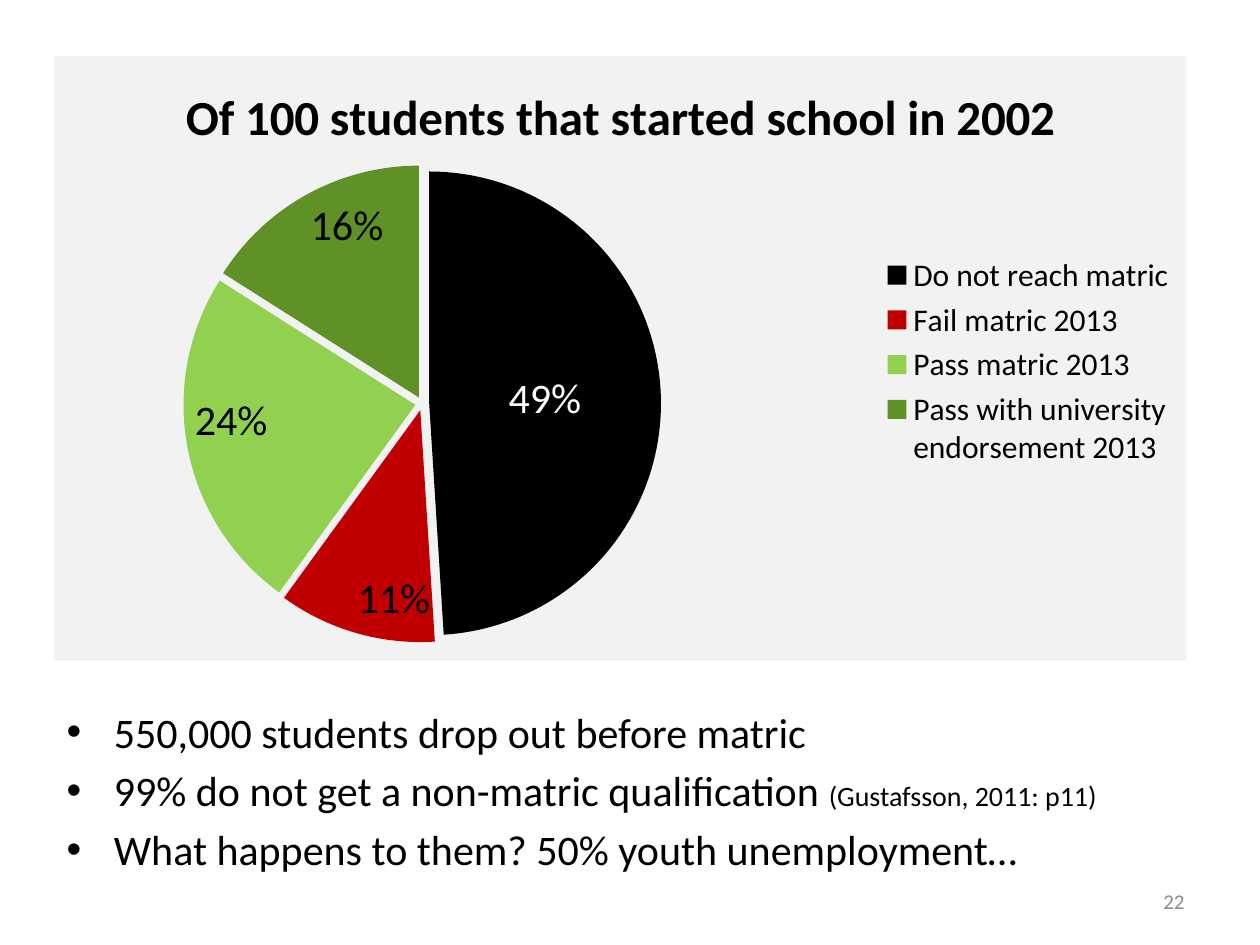
from dataclasses import dataclass

from lxml.etree import SubElement
from pptx import Presentation
from pptx.chart.data import CategoryChartData
from pptx.dml.color import RGBColor
from pptx.enum.chart import XL_CHART_TYPE, XL_LABEL_POSITION, XL_LEGEND_POSITION
from pptx.enum.text import MSO_ANCHOR, PP_ALIGN
from pptx.oxml import parse_xml
from pptx.oxml.ns import nsdecls, qn
from pptx.util import Pt


@dataclass(frozen=True)
class Theme:
    font: str = "Calibri"
    text: str = "000000"
    inverse: str = "FFFFFF"
    muted: str = "8C8C8C"
    panel: str = "F2F2F2"
    title: int = 28
    body: int = 24
    legend: int = 18
    cite: int = 16
    number: int = 12


@dataclass(frozen=True)
class Box:
    left: float
    top: float
    width: float
    height: float

    def pts(self) -> tuple:
        return Pt(self.left), Pt(self.top), Pt(self.width), Pt(self.height)


@dataclass(frozen=True)
class Slice:
    label: str
    share: int
    color: str


@dataclass(frozen=True)
class Bullet:
    text: str
    cite: str = ""


THEME = Theme()
SLICES = [
    Slice("Do not reach matric", 49, "000000"),
    Slice("Fail matric 2013", 11, "C00000"),
    Slice("Pass matric 2013", 24, "92D050"),
    Slice("Pass with university endorsement 2013", 16, "5F9127"),
]
BULLETS = [
    Bullet("550,000 students drop out before matric"),
    Bullet("99% do not get a non-matric qualification ", "(Gustafsson, 2011: p11)"),
    Bullet("What happens to them? 50% youth unemployment…"),
]


def set_font(font, size: int, color: str = THEME.text, bold: bool = False) -> None:
    font.name = THEME.font
    font.size = Pt(size)
    font.bold = bold
    font.color.rgb = RGBColor.from_string(color)


def add_run(p, text: str, **fmt) -> None:
    r = p.add_run()
    r.text = text
    set_font(r.font, **fmt)


def add_frame(s, box: Box, anchor: MSO_ANCHOR):
    tf = s.shapes.add_textbox(*box.pts()).text_frame
    tf.word_wrap = True
    tf.vertical_anchor = anchor
    return tf


def add_bullets(s, box: Box, bullets: list[Bullet]) -> None:
    tf = add_frame(s, box, MSO_ANCHOR.TOP)
    for i, bullet in enumerate(bullets):
        p = tf.add_paragraph() if i else tf.paragraphs[0]
        p.space_before = Pt(THEME.body * 0.2)
        pPr = p._p.get_or_add_pPr()
        pPr.set("marL", str(Pt(27)))
        pPr.set("indent", str(-Pt(27)))
        SubElement(pPr, qn("a:buFont")).set("typeface", "Arial")
        SubElement(pPr, qn("a:buChar")).set("char", "•")
        add_run(p, bullet.text, size=THEME.body)
        if bullet.cite:
            add_run(p, bullet.cite, size=THEME.cite)


def add_number(s, box: Box, number: str) -> None:
    p = add_frame(s, box, MSO_ANCHOR.MIDDLE).paragraphs[0]
    p.alignment = PP_ALIGN.RIGHT
    add_run(p, number, size=THEME.number, color=THEME.muted)


def set_layout(parent, index: int, frame: Box, inner: bool = False) -> None:
    for old in parent.findall(qn("c:layout")):
        parent.remove(old)
    target = '<c:layoutTarget val="inner"/>' if inner else ""
    parent.insert(index, parse_xml(
        f'<c:layout {nsdecls("c")}><c:manualLayout>{target}'
        '<c:xMode val="edge"/><c:yMode val="edge"/>'
        f'<c:x val="{frame.left}"/><c:y val="{frame.top}"/>'
        f'<c:w val="{frame.width}"/><c:h val="{frame.height}"/>'
        '</c:manualLayout></c:layout>'))


def add_pie(s, box: Box, title: str, slices: list[Slice]) -> None:
    data = CategoryChartData()
    data.categories = [x.label for x in slices]
    data.add_series("Series 1", [x.share for x in slices])
    chart = s.shapes.add_chart(XL_CHART_TYPE.PIE, *box.pts(), data).chart
    set_font(chart.font, 10)
    chart._chartSpace.find(qn("c:txPr")).addprevious(parse_xml(
        f'<c:spPr {nsdecls("c", "a")}><a:solidFill><a:srgbClr val="{THEME.panel}"/>'
        '</a:solidFill><a:ln><a:noFill/></a:ln></c:spPr>'))

    chart.has_title = True
    add_run(chart.chart_title.text_frame.paragraphs[0], title,
            size=THEME.title, bold=True)

    chart.has_legend = True
    legend = chart.legend
    legend.position = XL_LEGEND_POSITION.RIGHT
    legend.include_in_layout = False
    set_font(legend.font, THEME.legend)
    set_layout(legend._element, 1, Box(0.73, 0.32, 0.26, 0.37))

    plot = chart.plots[0]
    plot.vary_by_categories = True
    set_layout(chart._chartSpace.chart.plotArea, 0, Box(0.11, 0.18, 0.43, 0.79), inner=True)
    series = plot.series[0]
    for i, x in enumerate(slices):
        fill = series.points[i].format.fill
        fill.solid()
        fill.fore_color.rgb = RGBColor.from_string(x.color)
    series._element.find(qn("c:dPt")).addprevious(
        parse_xml(f'<c:explosion {nsdecls("c")} val="3"/>'))

    labels = series.data_labels
    labels.show_percentage = True
    labels.show_value = False
    labels.position = XL_LABEL_POSITION.INSIDE_END
    set_font(labels.font, THEME.body)
    first = series.points[0].data_label
    set_font(first.font, THEME.body, THEME.inverse)
    first.position = XL_LABEL_POSITION.CENTER
    dLbl = labels._element.find(qn("c:dLbl"))
    dLbl.find(qn("c:showVal")).set("val", "0")
    dLbl.find(qn("c:showPercent")).set("val", "1")


def main() -> None:
    prs = Presentation()
    prs.slide_width, prs.slide_height = Pt(720), Pt(540)
    s = prs.slides.add_slide(prs.slide_layouts[6])
    add_bullets(s, Box(31, 400, 648, 130), BULLETS)
    add_number(s, Box(516, 500.5, 168, 28.75), "22")
    add_pie(s, Box(31, 32, 647, 345.5),
            "Of 100 students that started school in 2002", SLICES)
    prs.save("out.pptx")


if __name__ == "__main__":
    main()
